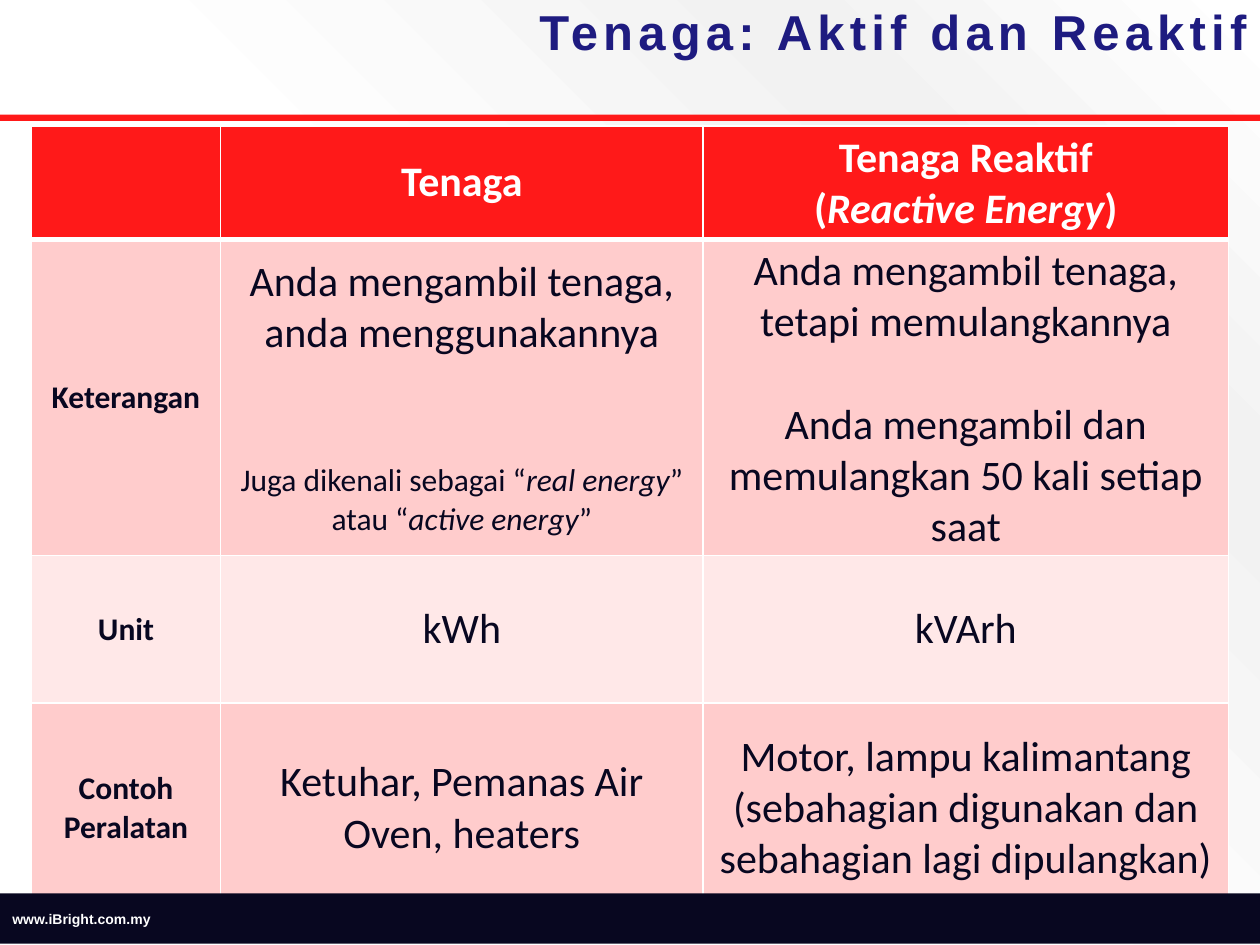
from pptx import Presentation
from pptx.dml.color import RGBColor
from pptx.enum.shapes import MSO_SHAPE
from pptx.enum.text import MSO_ANCHOR, MSO_AUTO_SIZE, PP_ALIGN
from pptx.oxml import parse_xml
from pptx.oxml.ns import nsdecls
from pptx.util import Inches, Pt

THEME = {
    "red": "FF1919", "navy": "1E1B80", "ink": "080720", "white": "FFFFFF",
    "bands": ("FFCCCC", "FFE8E8"),
    "gradient": ((0, "FFFFFF"), (22, "F2F2F2"), (53, "FFFFFF"), (82, "FFFFFF")),
    "heading_font": "Arial", "table_font": "Calibri",
    "title": 28, "large": 24, "small": 18, "footer": 8,
}
LARGE, SMALL = THEME["large"], THEME["small"]
BLANK_LINE = 29.3  # height of one large line, in points

TITLE = "Tenaga: Aktif dan Reaktif"
FOOTER = "www.iBright.com.my"

# A cell is a list of (text, size, space before); *text* is italic
ROWS = [
    [[],
     [("Tenaga", LARGE, 0)],
     [("Tenaga Reaktif", LARGE, 0), ("(*Reactive Energy*)", LARGE, 0)]],
    [[("Keterangan", SMALL, 0)],
     [("Anda mengambil tenaga, anda menggunakannya", LARGE, 0),
      ("Juga dikenali sebagai “*real energy*” atau “*active energy*”", SMALL, 2 * BLANK_LINE)],
     [("Anda mengambil tenaga, tetapi memulangkannya", LARGE, 0),
      ("Anda mengambil dan memulangkan 50 kali setiap saat", LARGE, BLANK_LINE)]],
    [[("Unit", SMALL, 0)], [("kWh", LARGE, 0)], [("kVArh", LARGE, 0)]],
    [[("Contoh Peralatan", SMALL, 0)],
     [("Ketuhar, Pemanas Air", LARGE, 0), ("Oven, heaters", LARGE, 0)],
     [("Motor, lampu kalimantang (sebahagian digunakan dan sebahagian lagi dipulangkan)",
       LARGE, 0)]],
]
COLUMN_WIDTHS = (1.5, 3.83, 4.17)
ROW_HEIGHTS = (0.89, 2.51, 1.17, 1.67)


def color(name):
    return RGBColor.from_string(THEME.get(name, name))


def set_font(paragraph, name, size, color_name, bold):
    font = paragraph.font
    font.name, font.size, font.bold = name, Pt(size), bold
    font.color.rgb = color(color_name)


def add_bar(slide, top, height, fill):
    bar = slide.shapes.add_shape(
        MSO_SHAPE.RECTANGLE, 0, Inches(top), Inches(10), Inches(height))
    bar.shadow.inherit = False
    bar.fill.solid()
    bar.fill.fore_color.rgb = color(fill)
    bar.line.fill.background()
    return bar


def set_background(slide):
    slide.background.fill.gradient()
    stops = "".join(f'<a:gs pos="{position * 1000}"><a:srgbClr val="{value}"/></a:gs>'
                    for position, value in THEME["gradient"])
    gradient = parse_xml(
        f'<a:gradFill {nsdecls("a")} rotWithShape="1"><a:gsLst>{stops}</a:gsLst>'
        '<a:path path="circle"><a:fillToRect l="100000" b="100000"/></a:path></a:gradFill>')
    old = slide.background._cSld.find(".//" + gradient.tag)
    old.getparent().replace(old, gradient)


def set_borders(cell, bottom_width):
    properties = cell._tc.get_or_add_tcPr()
    for index, side in enumerate(("lnL", "lnR", "lnT", "lnB")):
        width = Pt(bottom_width if side == "lnB" else 1)
        properties.insert(index, parse_xml(
            f'<a:{side} {nsdecls("a")} w="{width}"><a:solidFill>'
            f'<a:srgbClr val="{THEME["white"]}"/></a:solidFill></a:{side}>'))


def fill_cell(cell, lines, row, column):
    header = row == 0
    cell.fill.solid()
    cell.fill.fore_color.rgb = color("red" if header else THEME["bands"][(row - 1) % 2])
    cell.vertical_anchor = MSO_ANCHOR.MIDDLE
    set_borders(cell, 3 if header else 1)
    for number, (text, size, space) in enumerate(lines):
        frame = cell.text_frame
        paragraph = frame.add_paragraph() if number else frame.paragraphs[0]
        paragraph.alignment = PP_ALIGN.CENTER
        if space:
            paragraph.space_before = Pt(space)
        set_font(paragraph, THEME["table_font"], size,
                 "white" if header else "ink", header or column == 0)
        for part, piece in enumerate(text.split("*")):
            run = paragraph.add_run()
            run.text = piece
            if part % 2:
                run.font.italic = True


presentation = Presentation()
presentation.slide_width, presentation.slide_height = Inches(10), Inches(7.5)
slide = presentation.slides.add_slide(presentation.slide_layouts[5])
set_background(slide)

# Title and the rule below it
title = slide.shapes.title
title.left, title.top, title.width, title.height = map(Inches, (1, 0.01, 9, 0.53))
title.text_frame.text = TITLE
title.text_frame.auto_size = MSO_AUTO_SIZE.SHAPE_TO_FIT_TEXT
title.text_frame.vertical_anchor = MSO_ANCHOR.MIDDLE
paragraph = title.text_frame.paragraphs[0]
paragraph.alignment, paragraph.line_spacing = PP_ALIGN.RIGHT, 0.9
set_font(paragraph, THEME["heading_font"], THEME["title"], "navy", True)
paragraph.runs[0].font._element.set("spc", "300")
add_bar(slide, 0.91, 0.05, "red")

# Comparison table
table = slide.shapes.add_table(
    len(ROWS), len(COLUMN_WIDTHS), Inches(0.25), Inches(1),
    Inches(sum(COLUMN_WIDTHS)), Inches(sum(ROW_HEIGHTS))).table
for column, width in zip(table.columns, COLUMN_WIDTHS):
    column.width = Inches(width)
for row, height in zip(table.rows, ROW_HEIGHTS):
    row.height = Inches(height)
for row_index, cells in enumerate(ROWS):
    for column_index, lines in enumerate(cells):
        fill_cell(table.cell(row_index, column_index), lines, row_index, column_index)

# Footer bar over the foot of the table
footer = add_bar(slide, 7.09, 0.4, "ink")
footer.text_frame.text = FOOTER
footer.text_frame.vertical_anchor = MSO_ANCHOR.MIDDLE
paragraph = footer.text_frame.paragraphs[0]
paragraph.alignment = PP_ALIGN.LEFT
set_font(paragraph, THEME["heading_font"], THEME["footer"], "white", True)

presentation.save("out.pptx")
